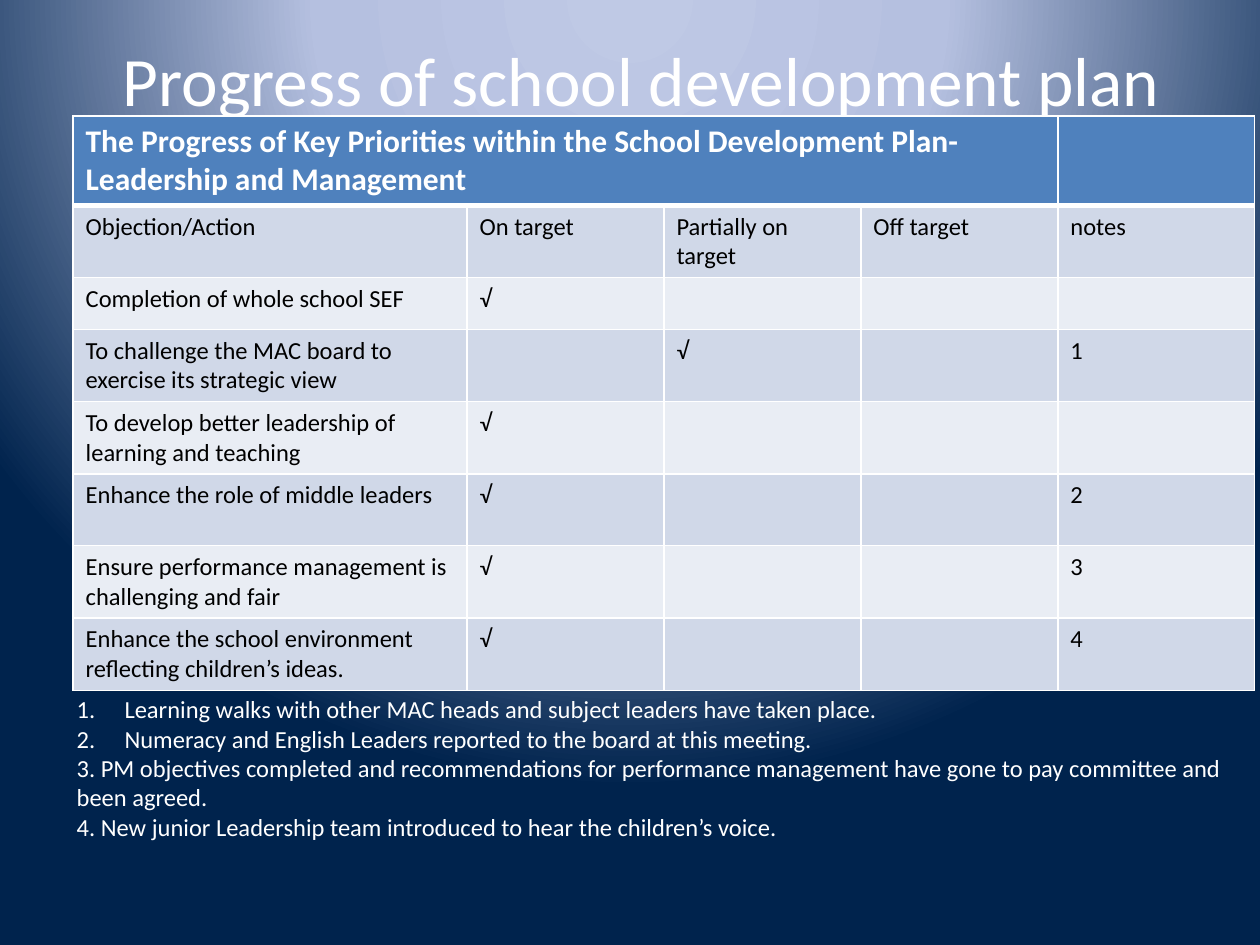
from lxml.etree import SubElement
from pptx import Presentation
from pptx.dml.color import RGBColor
from pptx.enum.text import MSO_ANCHOR, MSO_AUTO_SIZE, PP_ALIGN
from pptx.oxml import parse_xml
from pptx.oxml.ns import nsdecls, qn
from pptx.util import Inches, Pt

COLORS = {
    "white": "FFFFFF", "black": "000000", "header": "4F81BD",
    "dark_band": "D0D8E8", "light_band": "E9EDF4",
    "glow": "BFC9E5", "haze": "B5C0E0", "navy": "00234D",
}


def write(paragraph, text, size=14, color="black", bold=False, align=PP_ALIGN.LEFT, numbered=False):
    if numbered:
        properties = paragraph._p.get_or_add_pPr()
        properties.set("marL", str(Inches(0.38)))
        properties.set("indent", str(-Inches(0.38)))
        SubElement(properties, qn("a:buFont"), typeface="+mj-lt")
        SubElement(properties, qn("a:buAutoNum"), type="arabicPeriod")
    paragraph.alignment = align
    run = paragraph.add_run()
    run.text = text
    run.font.name = "Calibri"
    run.font.size = Pt(size)
    run.font.bold = bold
    run.font.color.rgb = RGBColor.from_string(COLORS[color])


def style_cell(cell, fill, bottom_width):
    cell.fill.solid()
    cell.fill.fore_color.rgb = RGBColor.from_string(COLORS[fill])
    properties = cell._tc.get_or_add_tcPr()
    widths = {"lnL": 1, "lnR": 1, "lnT": 1, "lnB": bottom_width}
    for position, (side, width) in enumerate(widths.items()):
        properties.insert(position, parse_xml(
            f'<a:{side} {nsdecls("a")} w="{Pt(width)}"><a:solidFill>'
            f'<a:srgbClr val="{COLORS["white"]}"/></a:solidFill></a:{side}>'))


presentation = Presentation()
presentation.slide_width = Inches(10)
presentation.slide_height = Inches(7.5)
slide = presentation.slides.add_slide(presentation.slide_layouts[5])

slide.background.fill.gradient()
gradient = slide.background._cSld.find(".//" + qn("a:gradFill"))
stops = "".join(
    f'<a:gs pos="{share * 1000}"><a:srgbClr val="{COLORS[name]}"/></a:gs>'
    for share, name in [(0, "glow"), (40, "haze"), (100, "navy")])
gradient.getparent().replace(gradient, parse_xml(
    f'<a:gradFill {nsdecls("a")} rotWithShape="1"><a:gsLst>{stops}</a:gsLst>'
    '<a:path path="circle"><a:fillToRect l="50000" t="-80000" r="50000" b="180000"/>'
    '</a:path></a:gradFill>'))

title = slide.shapes.title
title.left, title.top, title.width, title.height = Inches(0.59), 0, Inches(9), Inches(1.25)
title.text_frame.vertical_anchor = MSO_ANCHOR.MIDDLE
title.text_frame.auto_size = MSO_AUTO_SIZE.NONE
write(title.text_frame.paragraphs[0], "Progress of school development plan",
      size=39.6, color="white", align=PP_ALIGN.CENTER)

rows = [
    ["The Progress of Key Priorities within the School Development Plan- Leadership and Management",
     "", "", "", ""],
    ["Objection/Action", "On target", "Partially on target", "Off target", "notes"],
    ["Completion of whole school SEF", "√", "", "", ""],
    ["To challenge the MAC board to exercise its strategic view", "", "√", "", "1"],
    ["To develop better leadership of learning and teaching", "√", "", "", ""],
    ["Enhance the role of middle leaders", "√", "", "", "2"],
    ["Ensure performance management is challenging and fair", "√", "", "", "3"],
    ["Enhance the school environment reflecting children’s ideas.", "√", "", "", "4"],
]
column_shares = [2, 1, 1, 1, 1]
row_heights = [0.71, 0.57, 0.41] + [0.57] * 5
table_width = Inches(9.38)
table = slide.shapes.add_table(len(rows), len(column_shares), Inches(0.58), Inches(0.92),
                               table_width, Inches(sum(row_heights))).table
for column, share in zip(table.columns, column_shares):
    column.width = int(table_width * share / sum(column_shares))
for row, height in zip(table.rows, row_heights):
    row.height = Inches(height)
table.cell(0, 0).merge(table.cell(0, 3))

for row_index, texts in enumerate(rows):
    is_header = row_index == 0
    band = "dark_band" if row_index % 2 else "light_band"
    for column_index, text in enumerate(texts):
        cell = table.cell(row_index, column_index)
        style_cell(cell, "header" if is_header else band, 3 if is_header else 1)
        if text:
            write(cell.text_frame.paragraphs[0], text, size=18 if is_header else 14,
                  color="white" if is_header else "black", bold=is_header)

notes = [
    ("Learning walks with other MAC heads and subject leaders have taken place.", True),
    ("Numeracy and English Leaders reported to the board at this meeting.", True),
    ("3. PM objectives completed and recommendations for performance management "
     "have gone to pay committee and been agreed.", False),
    ("4. New junior Leadership team introduced to hear the children’s voice.", False),
]
notes_frame = slide.shapes.add_textbox(
    Inches(0.51), Inches(5.46), Inches(9.49), Inches(1.28)).text_frame
notes_frame.word_wrap = True
notes_frame.auto_size = MSO_AUTO_SIZE.SHAPE_TO_FIT_TEXT
for index, (text, numbered) in enumerate(notes):
    paragraph = notes_frame.add_paragraph() if index else notes_frame.paragraphs[0]
    write(paragraph, text, color="white", numbered=numbered)

presentation.save("out.pptx")
